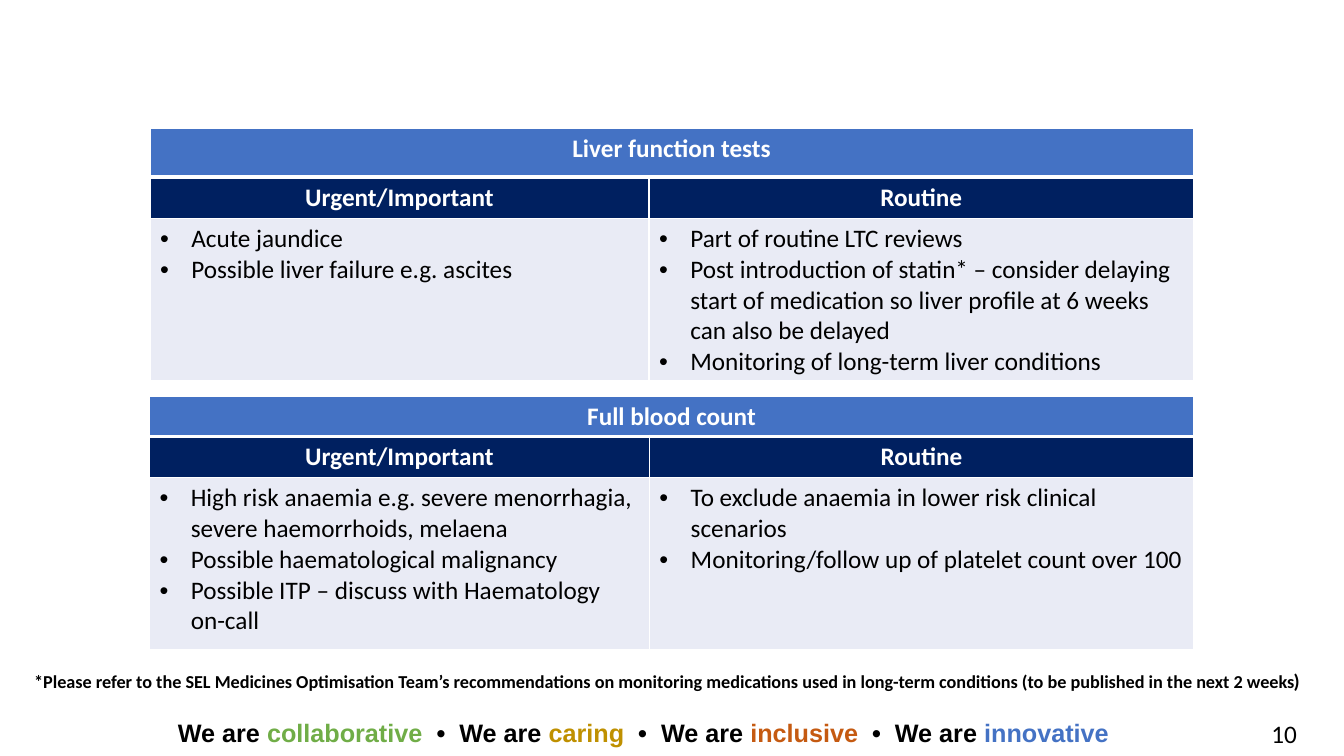
from lxml import etree
from pptx import Presentation
from pptx import util as u
from pptx.dml.color import RGBColor
from pptx.enum import text
from pptx.oxml.ns import qn

BLACK = RGBColor(0x00, 0x00, 0x00)
WHITE = RGBColor(0xFF, 0xFF, 0xFF)
BLUE = RGBColor(0x44, 0x72, 0xC4)
NAVY = RGBColor(0x00, 0x20, 0x60)
PALE = RGBColor(0xE9, 0xEB, 0xF5)
GREEN = RGBColor(0x70, 0xAD, 0x47)
GOLD = RGBColor(0xBF, 0x90, 0x00)
RUST = RGBColor(0xC5, 0x5A, 0x11)
LEFT = text.PP_ALIGN.LEFT
MID = text.PP_ALIGN.CENTER
RIGHT = text.PP_ALIGN.RIGHT


def write(para, words, size=18, font="Calibri", color=BLACK, bold=False, align=LEFT):
    """Add one formatted run to a paragraph."""
    para.alignment = align
    run = para.add_run()
    run.text = words
    run.font.size = u.Pt(size)
    run.font.name = font
    run.font.bold = bold
    run.font.color.rgb = color


def bullet(para, indent=u.Inches(0.31)):
    props = para._p.get_or_add_pPr()
    props.set("marL", str(indent))
    props.set("indent", str(-indent))
    etree.SubElement(props, qn("a:buFont")).set("typeface", "Arial")
    etree.SubElement(props, qn("a:buChar")).set("char", "•")


def edge(cell, top=1, base=1):
    """Draw white borders, with widths in points."""
    props = cell._tc.get_or_add_tcPr()
    for side, width in (("L", 1), ("R", 1), ("T", top), ("B", base)):
        line = etree.SubElement(props, qn("a:ln" + side))
        line.set("w", str(u.Pt(width)))
        fill = etree.SubElement(line, qn("a:solidFill"))
        etree.SubElement(fill, qn("a:srgbClr")).set("val", str(WHITE))


class Page:
    """The current slide; all lengths are percent of its width or height."""

    def __init__(self, deck):
        self.deck = deck
        self.slide = deck.slides.add_slide(deck.slide_layouts[6])

    def wide(self, share):
        return round(self.deck.slide_width * share / 100)

    def high(self, share):
        return round(self.deck.slide_height * share / 100)

    def label(self, x, y, w, h, runs, **style):
        """Add a one-paragraph text box from (words, changes) pairs."""
        box = self.slide.shapes.add_textbox(
            self.wide(x), self.high(y), self.wide(w), self.high(h))
        box.text_frame.word_wrap = True
        for words, change in runs:
            write(box.text_frame.paragraphs[0], words, **{**style, **change})

    def table(self, x, y, cols, rows, title, lists):
        """Add a titled table with one bullet list per column."""
        grid = self.slide.shapes.add_table(
            len(rows), len(cols), self.wide(x), self.high(y),
            self.wide(sum(cols)), self.high(sum(rows))).table
        grid.horz_banding = False
        for col, share in zip(grid.columns, cols):
            col.width = self.wide(share)
        for row, share in zip(grid.rows, rows):
            row.height = self.high(share)

        # Borders and fills
        looks = ((BLUE, 1, 3), (NAVY, 3, 1), (PALE, 1, 1))
        for row, (color, top, base) in zip(grid.rows, looks):
            for cell in row.cells:
                edge(cell, top, base)
                cell.fill.solid()
                cell.fill.fore_color.rgb = color

        # Headings
        grid.cell(0, 0).merge(grid.cell(0, 1))
        heads = ((0, 0, title), (1, 0, "Urgent/Important"), (1, 1, "Routine"))
        for r, c, words in heads:
            write(grid.cell(r, c).text_frame.paragraphs[0], words,
                  color=WHITE, bold=True, align=MID)

        # Bullet lists
        for c, items in enumerate(lists):
            frame = grid.cell(2, c).text_frame
            for i, words in enumerate(items):
                para = frame.add_paragraph() if i else frame.paragraphs[0]
                bullet(para)
                write(para, words)


def main():
    deck = Presentation()
    deck.slide_width = u.Inches(13.33)
    deck.slide_height = u.Inches(7.5)
    page = Page(deck)

    # Footer slogan and page number
    values = (("collaborative", GREEN), ("caring", GOLD),
              ("inclusive", RUST), ("innovative", BLUE))
    runs = []
    for i, (word, color) in enumerate(values):
        runs += [("  •  We are " if i else "We are ", {}), (word, {"color": color})]
    page.label(12.5, 94.27, 75, 5.33, runs, font="Arial", bold=True)
    page.label(83.35, 94.4, 13.88, 5.33, [("10", {})], align=RIGHT)

    # Test tables
    page.table(11.16, 16.93, (37.13, 40.5), (6.53, 5.47, 21.47), "Liver function tests", (
        ("Acute jaundice",
         "Possible liver failure e.g. ascites"),
        ("Part of routine LTC reviews",
         "Post introduction of statin* – consider delaying start of medication "
         "so liver profile at 6 weeks can also be delayed",
         "Monitoring of long-term liver conditions")))
    page.table(11.12, 52.4, (37.2, 40.5), (5.33, 5.47, 22.67), "Full blood count", (
        ("High risk anaemia e.g. severe menorrhagia, severe haemorrhoids, melaena",
         "Possible haematological malignancy",
         "Possible ITP – discuss with Haematology on-call"),
        ("To exclude anaemia in lower risk clinical scenarios",
         "Monitoring/follow up of platelet count over 100")))

    # Footnote
    page.label(1.8, 87.87, 96.25, 4.53, [
        ("*Please refer to the SEL Medicines Optimisation Team’s recommendations on "
         "monitoring medications used in long-term conditions "
         "(to be published in the next 2 weeks", {}),
        (")", {"size": 14})], size=13, bold=True)

    deck.save("out.pptx")


if __name__ == "__main__":
    main()
